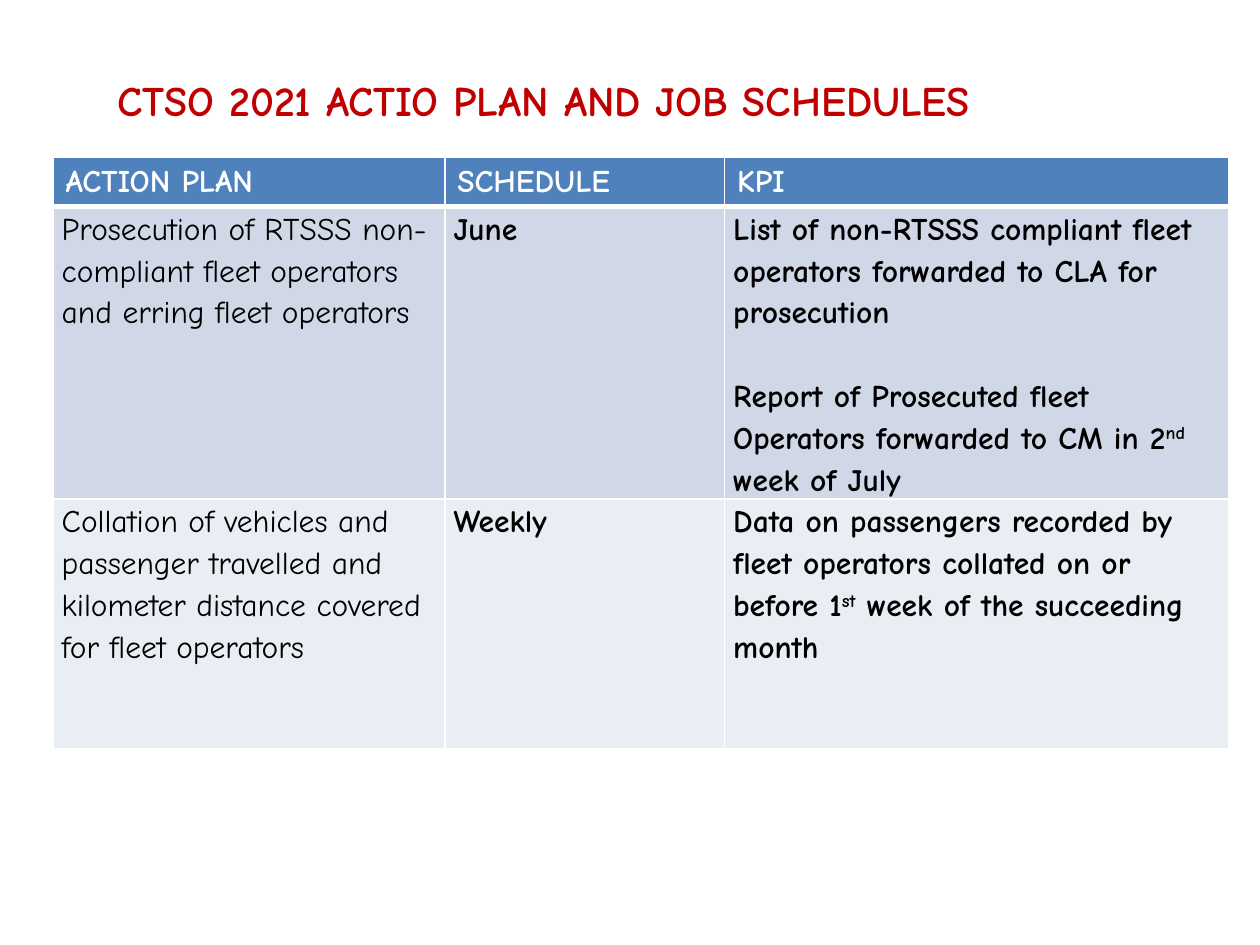
"""Build the CTSO 2021 action plan slide with its schedule table."""
from dataclasses import dataclass

from lxml import etree
from pptx import Presentation
from pptx import util as u
from pptx.dml.color import RGBColor
from pptx.enum import text
from pptx.oxml.ns import qn


@dataclass(frozen=True)
class Theme:
    font: str = "Comic Neue"
    title_size: int = 24
    table_size: int = 18
    title: str = "C00000"
    header: str = "4F81BD"
    bands: tuple = ("D0D8E8", "E9EDF4")
    light: str = "FFFFFF"
    dark: str = "000000"
    line_spacing: float = 1.15
    paragraph_gap: int = 24
    thin: int = 1
    thick: int = 3


THEME = Theme()
COLUMN_WIDTHS = (3.11, 2.22, 4)
ROW_HEIGHTS = (0.38, 2.32, 1.98)
HEADINGS = ("ACTION PLAN", "SCHEDULE", "KPI")
PLANS = (
    (
        [["Prosecution of RTSSS non-compliant fleet operators and erring fleet operators"]],
        [["June"]],
        [
            ["List of non-RTSSS compliant fleet operators forwarded to CLA for prosecution"],
            ["Report of Prosecuted fleet Operators forwarded to CM in 2", "nd", " week of July"],
        ],
    ),
    (
        [["Collation of vehicles and passenger travelled and kilometer distance covered for fleet operators"]],
        [["Weekly"]],
        [["Data on passengers recorded by fleet operators collated on or before 1", "st",
          " week of the succeeding month"]],
    ),
)


def add_run(paragraph, words, size, color, bold=True, raised=False):
    """Append one formatted run, raised when it is an ordinal ending."""
    run = paragraph.add_run()
    run.text = words
    font = run.font
    font.name, font.size, font.bold = THEME.font, u.Pt(size), bold
    font.color.rgb = RGBColor.from_string(color)
    if raised:
        run._r.get_or_add_rPr().set("baseline", "30000")


def set_borders(cell, top, bottom):
    """Give a cell white borders with the stated top and bottom widths."""
    properties = cell._tc.get_or_add_tcPr()
    widths = {"lnL": THEME.thin, "lnR": THEME.thin, "lnT": top, "lnB": bottom}
    for position, (side, width) in enumerate(widths.items()):
        line = etree.Element(qn(f"a:{side}"), w=str(u.Pt(width)))
        fill = etree.SubElement(line, qn("a:solidFill"))
        etree.SubElement(fill, qn("a:srgbClr"), val=THEME.light)
        properties.insert(position, line)


def style_cell(cell, fill, top, bottom):
    """Fill a cell and draw its borders."""
    cell.fill.solid()
    cell.fill.fore_color.rgb = RGBColor.from_string(fill)
    set_borders(cell, top, bottom)


def fill_header(cell, heading):
    """Write one column heading."""
    style_cell(cell, THEME.header, THEME.thin, THEME.thick)
    add_run(cell.text_frame.paragraphs[0], heading, THEME.table_size, THEME.light)


def fill_body(cell, paragraphs, fill, top, bold):
    """Write the paragraphs of one plan cell."""
    style_cell(cell, fill, top, THEME.thin)
    cell.margin_left = cell.margin_right = u.Inches(0.07)
    cell.margin_top = cell.margin_bottom = 0
    frame = cell.text_frame
    for number, runs in enumerate(paragraphs):
        paragraph = frame.add_paragraph() if number else frame.paragraphs[0]
        paragraph.line_spacing = THEME.line_spacing
        if number:
            paragraph.space_before = u.Pt(THEME.paragraph_gap)
        for index, words in enumerate(runs):
            add_run(paragraph, words, THEME.table_size, THEME.dark, bold, raised=index == 1)


def add_title(slide, words):
    """Place and format the slide title."""
    title = slide.shapes.title
    title.left, title.top = u.Inches(0.83), u.Inches(0.42)
    title.width, title.height = u.Inches(8.5), u.Inches(0.75)
    frame = title.text_frame
    frame.word_wrap = True
    frame.vertical_anchor = text.MSO_ANCHOR.MIDDLE
    paragraph = frame.paragraphs[0]
    paragraph.alignment = text.PP_ALIGN.LEFT
    add_run(paragraph, words, THEME.title_size, THEME.title)


def add_plan_table(slide):
    """Add the table of plans, schedules and indicators."""
    table = slide.shapes.add_table(
        len(ROW_HEIGHTS), len(COLUMN_WIDTHS), u.Inches(0.42), u.Inches(1.25),
        u.Inches(sum(COLUMN_WIDTHS)), u.Inches(sum(ROW_HEIGHTS)),
    ).table
    for column, width in zip(table.columns, COLUMN_WIDTHS):
        column.width = u.Inches(width)
    for row, height in zip(table.rows, ROW_HEIGHTS):
        row.height = u.Inches(height)
    for column, heading in enumerate(HEADINGS):
        fill_header(table.cell(0, column), heading)
    for row, (plan, fill) in enumerate(zip(PLANS, THEME.bands), start=1):
        top = THEME.thick if row == 1 else THEME.thin
        for column, paragraphs in enumerate(plan):
            fill_body(table.cell(row, column), paragraphs, fill, top, bold=column > 0)


def main():
    """Create and save the presentation."""
    presentation = Presentation()
    presentation.slide_width, presentation.slide_height = u.Inches(10), u.Inches(7.5)
    slide = presentation.slides.add_slide(presentation.slide_layouts[5])
    add_title(slide, "CTSO 2021 ACTIO PLAN AND JOB SCHEDULES")
    add_plan_table(slide)
    presentation.save("out.pptx")


if __name__ == "__main__":
    main()
